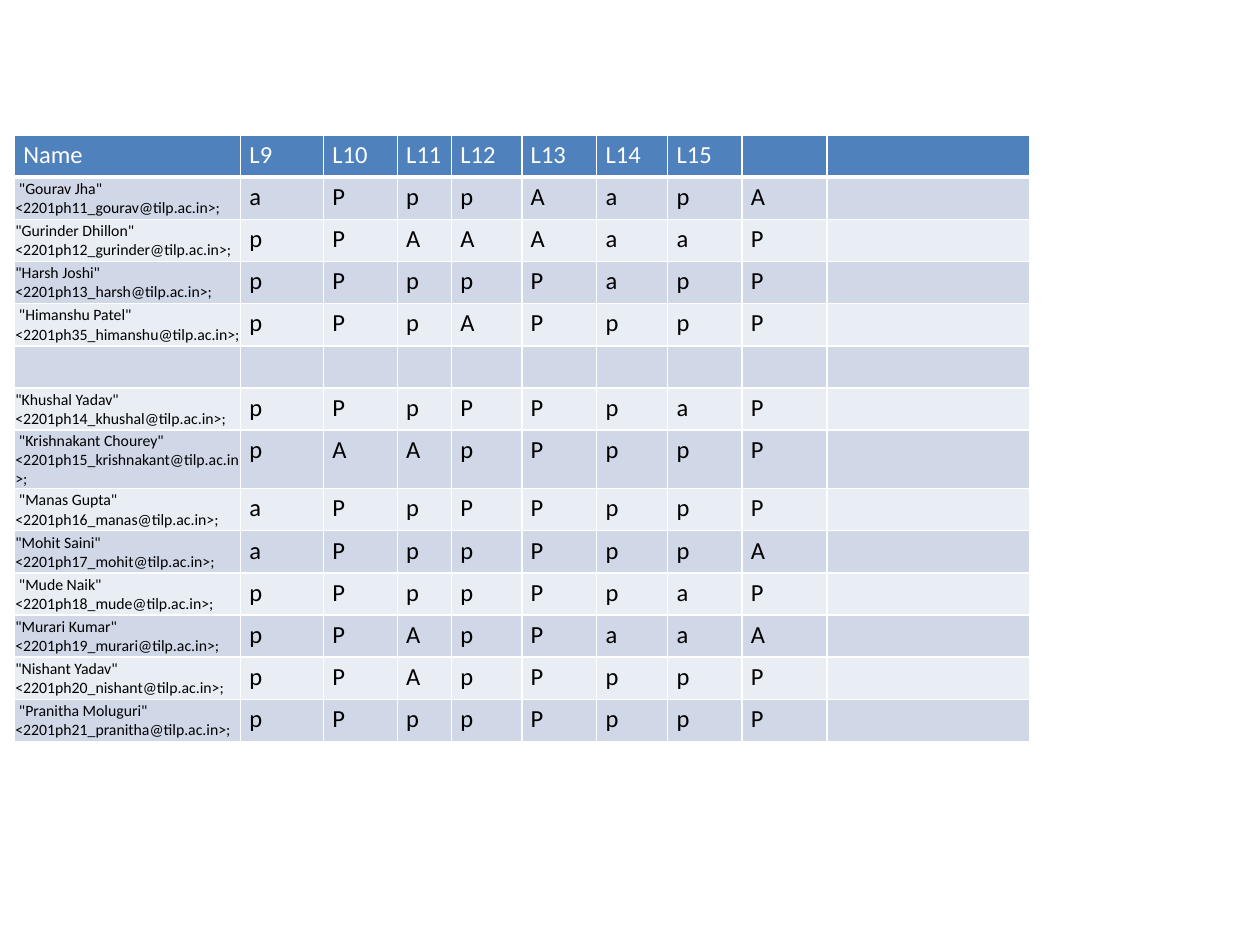
from lxml import etree
from pptx import Presentation
from pptx.dml.color import RGBColor
from pptx.enum.text import MSO_ANCHOR
from pptx.oxml.ns import qn
from pptx.util import Cm, Pt

HEADINGS = ["Name", "L9", "L10", "L11", "L12", "L13", "L14", "L15", "", ""]

# label, address, attendance marks for the columns after the name
STUDENTS = [
    (' "Gourav Jha"', "2201ph11_gourav", "aPppAapA"),
    ('"Gurinder Dhillon"', "2201ph12_gurinder", "pPAAAaaP"),
    ('"Harsh Joshi"', "2201ph13_harsh", "pPppPapP"),
    (' "Himanshu Patel"', "2201ph35_himanshu", "pPpAPppP"),
    None,
    ('"Khushal Yadav"', "2201ph14_khushal", "pPpPPpaP"),
    (' "Krishnakant Chourey"', "2201ph15_krishnakant", "pAApPppP"),
    (' "Manas Gupta"', "2201ph16_manas", "aPpPPppP"),
    ('"Mohit Saini"', "2201ph17_mohit", "aPppPppA"),
    (' "Mude Naik"', "2201ph18_mude", "pPppPpaP"),
    ('"Murari Kumar"', "2201ph19_murari", "pPApPaaA"),
    ('"Nishant Yadav"', "2201ph20_nishant", "pPApPppP"),
    (' "Pranitha Moluguri"', "2201ph21_pranitha", "pPppPppP"),
]
DOMAIN = "tilp.ac.in"

THEME = {
    "font": "Calibri",
    "header": RGBColor(0x4F, 0x81, 0xBD),
    "bands": (RGBColor(0xD0, 0xD8, 0xE8), RGBColor(0xE9, 0xED, 0xF4)),
    "header_text": RGBColor(0xFF, 0xFF, 0xFF),
    "text": RGBColor(0, 0, 0),
    "border": "FFFFFF",
    "mark_size": Pt(14),
    "name_size": Pt(9),
}

LEFT, TOP = Cm(0.29), Cm(2.72)
COLUMN_WIDTHS = [Cm(w) for w in (4.56, 1.67, 1.49, 1.09, 1.42, 1.51, 1.43, 1.5, 1.71, 4.08)]
ROW_HEIGHT, TALL_ROW_HEIGHT = Cm(0.85), Cm(1.17)
LONG_ADDRESS = 18  # characters before the address needs a third line
MARK_INSETS = (Cm(0.18), Cm(0.1), Cm(0.18), Cm(0.1))
NAME_INSETS = (Cm(0.02), Cm(0.02), Cm(0.02), 0)


def table_row(student):
    if student is None:
        return [""] * len(HEADINGS)
    label, address, marks = student
    return [f"{label} <{address}@{DOMAIN}>;", *marks, ""]


def row_height(student):
    is_long = student is not None and len(student[1]) > LONG_ADDRESS
    return TALL_ROW_HEIGHT if is_long else ROW_HEIGHT


def add_borders(cell, bottom):
    """Draw the four cell edges; must run before the cell is filled."""
    properties = cell._tc.get_or_add_tcPr()
    for side, width in (("L", Pt(1)), ("R", Pt(1)), ("T", Pt(1)), ("B", bottom)):
        line = etree.SubElement(properties, qn(f"a:ln{side}"), w=str(width))
        paint = etree.SubElement(line, qn("a:solidFill"))
        etree.SubElement(paint, qn("a:srgbClr"), val=THEME["border"])


def format_cell(cell, content, fill, color, is_name, bottom):
    add_borders(cell, bottom)
    cell.fill.solid()
    cell.fill.fore_color.rgb = fill
    insets = NAME_INSETS if is_name else MARK_INSETS
    cell.margin_left, cell.margin_top, cell.margin_right, cell.margin_bottom = insets
    cell.vertical_anchor = MSO_ANCHOR.MIDDLE if is_name else MSO_ANCHOR.TOP
    cell.text = content
    size = THEME["name_size" if is_name else "mark_size"]
    paragraph = cell.text_frame.paragraphs[0]
    paragraph.font.name = THEME["font"]
    paragraph.font.size = size
    paragraph.font.bold = False
    paragraph.font.color.rgb = color
    if not content:  # an empty paragraph takes its height from its end mark
        end_mark = etree.SubElement(paragraph._p, qn("a:endParaRPr"))
        end_mark.set("sz", str(int(size.pt * 100)))


def main():
    prs = Presentation()
    prs.slide_width, prs.slide_height = Cm(25.4), Cm(19.05)
    slide = prs.slides.add_slide(prs.slide_layouts[6])

    rows = [HEADINGS] + [table_row(student) for student in STUDENTS]
    heights = [ROW_HEIGHT] + [row_height(student) for student in STUDENTS]
    attendance = slide.shapes.add_table(
        len(rows), len(HEADINGS), LEFT, TOP, sum(COLUMN_WIDTHS), sum(heights)).table
    for column, width in zip(attendance.columns, COLUMN_WIDTHS):
        column.width = width
    for row, height in zip(attendance.rows, heights):
        row.height = height

    for r, contents in enumerate(rows):
        is_header = r == 0
        fill = THEME["header"] if is_header else THEME["bands"][(r - 1) % 2]
        color = THEME["header_text" if is_header else "text"]
        bottom = Pt(3) if is_header else Pt(1)
        for c, content in enumerate(contents):
            is_name = c == 0 and not is_header
            format_cell(attendance.cell(r, c), content, fill, color, is_name, bottom)

    prs.save("out.pptx")


if __name__ == "__main__":
    main()
